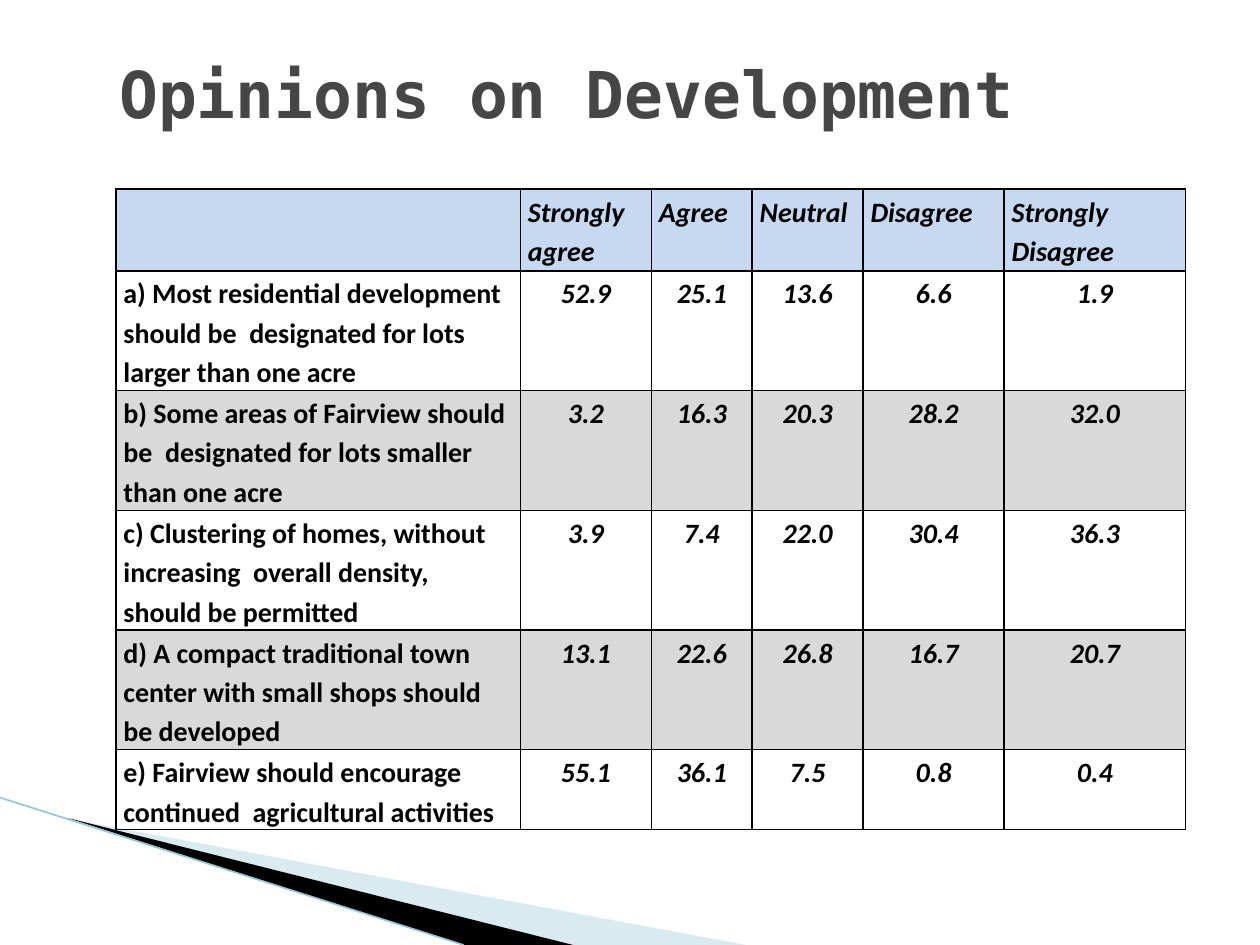
from dataclasses import dataclass

import pptx
import pptx.dml.color
import pptx.enum.text
import pptx.oxml
import pptx.oxml.ns
import pptx.util
from pptx.util import Inches


@dataclass(frozen=True)
class Theme:
    title_font: str = "DejaVu Sans Mono"
    table_font: str = "Calibri"
    title_size: float = 36.9
    table_size: float = 16
    title: str = "464646"
    ink: str = "000000"
    header: str = "C6D9F1"
    band: str = "D9D9D9"
    pale_wedge: str = "A0CBDC"
    edge: str = "97C5D8"


THEME = Theme()
ALIGN = pptx.enum.text.PP_ALIGN
COLUMN_WIDTHS = [3.21, 1.04, 0.8, 0.88, 1.12, 1.44]
ROW_HEIGHTS = [0.65, 0.95, 0.95, 0.95, 0.95, 0.63]
ROWS = [
    ["", "Strongly agree", "Agree", "Neutral", "Disagree", "Strongly Disagree"],
    ["a) Most residential development should be  designated for lots larger than one acre",
     "52.9", "25.1", "13.6", "6.6", "1.9"],
    ["b) Some areas of Fairview should be  designated for lots smaller than one acre",
     "3.2", "16.3", "20.3", "28.2", "32.0"],
    ["c) Clustering of homes, without increasing  overall density, should be permitted",
     "3.9", "7.4", "22.0", "30.4", "36.3"],
    ["d) A compact traditional town center with small shops should be developed",
     "13.1", "22.6", "26.8", "16.7", "20.7"],
    ["e) Fairview should encourage continued  agricultural activities",
     "55.1", "36.1", "7.5", "0.8", "0.4"],
]


def rgb(value):
    return pptx.dml.color.RGBColor.from_string(value)


def add_span(para, text, font, size, color, italic=False):
    span = para.add_run()
    span.text = text
    span.font.name = font
    span.font.size = pptx.util.Pt(size)
    span.font.bold = True
    span.font.italic = italic
    span.font.color.rgb = rgb(color)


def add_wedge(page, points, color, opacity=100):
    corners = [(Inches(x), Inches(y)) for x, y in points]
    builder = page.shapes.build_freeform(*corners[0])
    builder.add_line_segments(corners[1:])
    wedge = builder.convert_to_shape()
    wedge.shadow.inherit = False
    wedge.line.fill.background()
    wedge.fill.solid()
    wedge.fill.fore_color.rgb = rgb(color)
    if opacity < 100:
        fill_color = wedge.element.spPr.find(".//" + pptx.oxml.ns.qn("a:srgbClr"))
        alpha = pptx.oxml.parse_xml(
            f'<a:alpha {pptx.oxml.ns.nsdecls("a")} val="{opacity * 1000}"/>')
        fill_color.append(alpha)


def add_edge(page, start, end):
    edge = page.shapes.add_connector(
        pptx.enum.shapes.MSO_CONNECTOR.STRAIGHT,
        *(Inches(value) for value in (*start, *end)))
    edge.line.color.rgb = rgb(THEME.edge)
    edge.line.width = pptx.util.Pt(0.95)
    edge.element.spPr.append(
        pptx.oxml.parse_xml(f'<a:effectLst {pptx.oxml.ns.nsdecls("a")}/>'))


def set_title(page, text):
    title = page.shapes.title
    title.left, title.top = Inches(0), Inches(0.3)
    title.width, title.height = Inches(9), Inches(0.87)
    frame = title.text_frame
    frame.word_wrap = True
    frame.vertical_anchor = pptx.enum.text.MSO_ANCHOR.MIDDLE
    para = frame.paragraphs[0]
    para.alignment = ALIGN.CENTER
    add_span(para, text, THEME.title_font, THEME.title_size, THEME.title)


def set_borders(cell):
    properties = cell._tc.get_or_add_tcPr()
    for side in "LRTB":
        properties.append(pptx.oxml.parse_xml(
            f'<a:ln{side} {pptx.oxml.ns.nsdecls("a")} w="12700"><a:solidFill>'
            f'<a:srgbClr val="{THEME.ink}"/></a:solidFill></a:ln{side}>'))


def fill_cell(cell, text, fill, alignment, italic):
    cell.margin_left = cell.margin_right = Inches(0.06)
    cell.margin_top, cell.margin_bottom = Inches(0.01), Inches(0)
    set_borders(cell)
    if fill:
        cell.fill.solid()
        cell.fill.fore_color.rgb = rgb(fill)
    else:
        cell.fill.background()
    if text:
        para = cell.text_frame.paragraphs[0]
        para.alignment = alignment
        para.line_spacing = 1.15
        para.space_after = pptx.util.Pt(10)
        add_span(para, text, THEME.table_font, THEME.table_size, THEME.ink, italic)


def add_opinion_table(page):
    table = page.shapes.add_table(
        len(ROWS), len(COLUMN_WIDTHS), Inches(0.92), Inches(1.5),
        Inches(sum(COLUMN_WIDTHS)), Inches(sum(ROW_HEIGHTS))).table
    for column, width in zip(table.columns, COLUMN_WIDTHS):
        column.width = Inches(width)
    for row, height in zip(table.rows, ROW_HEIGHTS):
        row.height = Inches(height)
    for r, texts in enumerate(ROWS):
        band = THEME.band if r % 2 == 0 else None
        fill = THEME.header if r == 0 else band
        for c, text in enumerate(texts):
            alignment = ALIGN.CENTER if r and c else ALIGN.LEFT
            fill_cell(table.cell(r, c), text, fill, alignment, italic=c > 0)


def main():
    deck = pptx.Presentation()
    deck.slide_width, deck.slide_height = Inches(10), Inches(7.5)
    page = deck.slides.add_slide(deck.slide_layouts[5])
    add_wedge(page, [(0.55, 6.5), (5.92, 7.5), (4.56, 7.5)], THEME.pale_wedge, 40)
    add_wedge(page, [(0.53, 6.49), (4.55, 7.5), (3.68, 7.5)], THEME.ink)
    add_edge(page, (0, 6.33), (3.68, 7.5))
    set_title(page, "Opinions on Development")
    add_opinion_table(page)
    deck.save("out.pptx")


if __name__ == "__main__":
    main()
